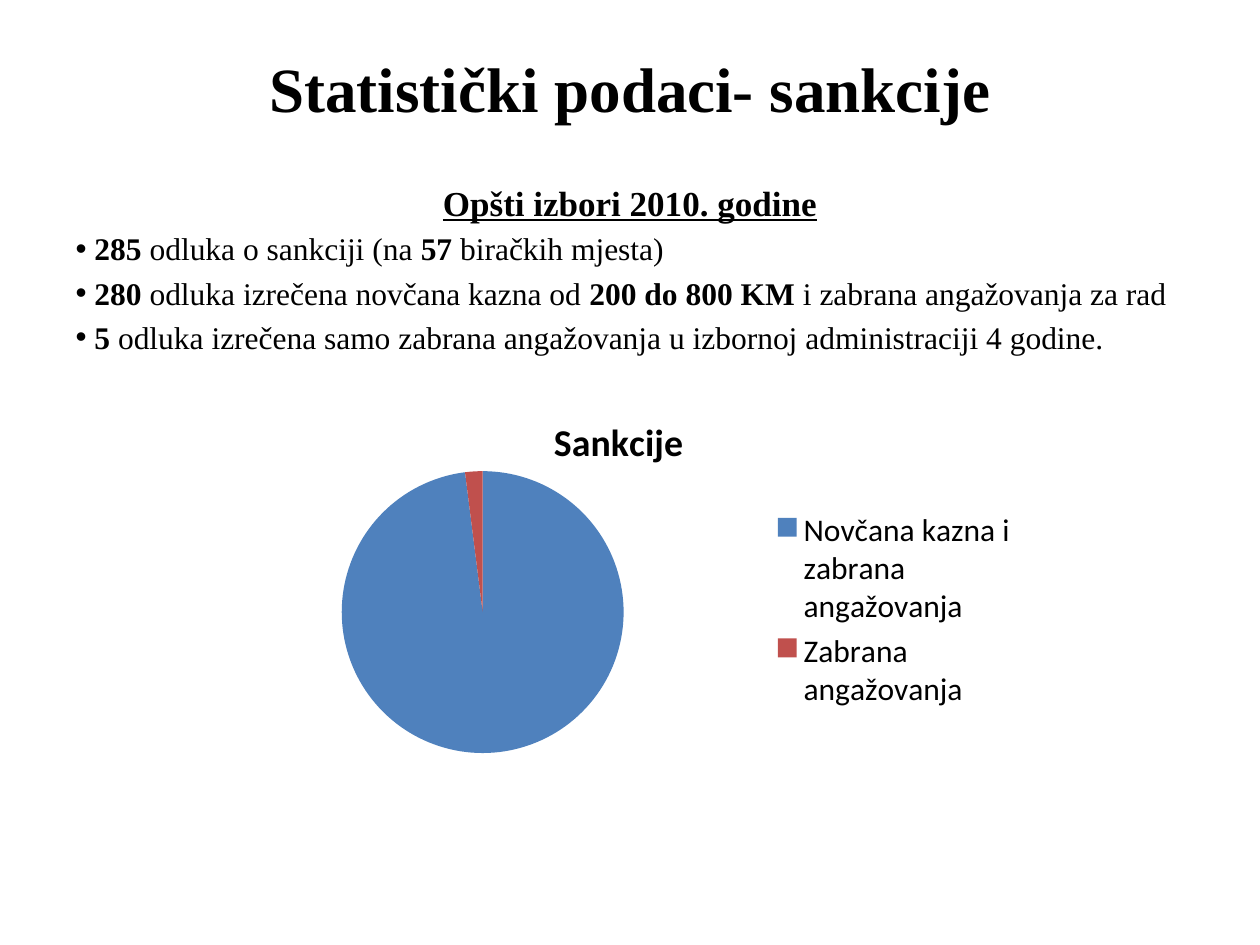
from lxml.etree import SubElement
from pptx import Presentation
from pptx.chart.data import CategoryChartData
from pptx.dml.color import RGBColor as RGB
from pptx.enum.chart import XL_CHART_TYPE as ChartType, XL_LEGEND_POSITION as LegendPos
from pptx.enum.text import MSO_ANCHOR as Anchor, PP_ALIGN as Align
from pptx.oxml.ns import qn
from pptx.util import Inches, Pt

THEME = {
    "text": RGB(0, 0, 0),
    "slices": [RGB(0x4F, 0x81, 0xBD), RGB(0xC0, 0x50, 0x4D)],
    "serif": "Times New Roman",
    "sans": "Calibri",
    "title": Pt(36),
    "heading": Pt(20),
    "body": Pt(18),
    "chart_title": Pt(21.6),
}

prs = Presentation()
prs.slide_width, prs.slide_height = Inches(10), Inches(7.5)
slide = prs.slides.add_slide(prs.slide_layouts[1])


def share_box(left, top, width, height):
    """Turn shares of the slide's size into a left, top, width, height tuple."""
    w, h = prs.slide_width, prs.slide_height
    return int(left * w), int(top * h), int(width * w), int(height * h)


def style(font, **values):
    for key, value in values.items():
        setattr(font, key, value)
    font.color.rgb = THEME["text"]


title, body = slide.placeholders
for holder, box in [(title, (0.05, 0.04, 0.9, 0.105)), (body, (0.05, 0.185, 0.9, 0.71))]:
    holder.left, holder.top, holder.width, holder.height = share_box(*box)

title.text_frame.text = "Statistički podaci- sankcije"
title.text_frame.vertical_anchor = Anchor.MIDDLE
title_line = title.text_frame.paragraphs[0]
title_line.alignment = Align.CENTER
style(title_line.runs[0].font, name=THEME["serif"], size=THEME["title"], bold=True)

body.text_frame.text = "Opšti izbori 2010. godine"
heading = body.text_frame.paragraphs[0]
heading.alignment = Align.CENTER
SubElement(heading._p.get_or_add_pPr(), qn("a:buNone"))
style(heading.runs[0].font, name=THEME["serif"], size=THEME["heading"],
      bold=True, underline=True)

# Runs alternate between bold and regular, starting with bold.
findings = [
    [" 285 ", "odluka o sankciji (na ", "57", " biračkih mjesta)"],
    [" 280", " odluka izrečena novčana kazna od ", "200 do 800 KM ",
     "i zabrana angažovanja za rad"],
    [" 5", " odluka izrečena samo zabrana angažovanja u izbornoj administraciji 4 godine."],
]
for finding in findings:
    line = body.text_frame.add_paragraph()
    line.alignment = Align.JUSTIFY
    props = line._p.get_or_add_pPr()
    props.set("marL", "0")
    props.set("indent", "0")
    SubElement(props, qn("a:buChar"), char="•")
    for i, words in enumerate(finding):
        run = line.add_run()
        run.text = words
        style(run.font, name=THEME["serif"], size=THEME["body"], bold=i % 2 == 0)

sanctions = CategoryChartData()
sanctions.categories = ["Novčana kazna i zabrana angažovanja", "Zabrana angažovanja"]
sanctions.add_series("Sankcije", [98, 2])
pie = slide.shapes.add_chart(
    ChartType.PIE, *share_box(0.164, 0.416, 0.654, 0.459), sanctions).chart
style(pie.font, name=THEME["sans"], size=THEME["body"])

pie.has_title = True
pie.chart_title.text_frame.text = "Sankcije"
style(pie.chart_title.text_frame.paragraphs[0].runs[0].font,
      name=THEME["sans"], size=THEME["chart_title"], bold=True)

pie.has_legend = True
pie.legend.position = LegendPos.RIGHT
pie.legend.include_in_layout = False

plot = pie.plots[0]
plot.vary_by_categories = True
for i, color in enumerate(THEME["slices"]):
    fill = plot.series[0].points[i].format.fill
    fill.solid()
    fill.fore_color.rgb = color

plot_area = pie._chartSpace.chart.plotArea
for old in plot_area.findall(qn("c:layout")):
    plot_area.remove(old)
layout = SubElement(plot_area, qn("c:layout"))
plot_area.insert(0, layout)
manual = SubElement(layout, qn("c:manualLayout"))
for tag, value in [("layoutTarget", "inner"), ("xMode", "edge"), ("yMode", "edge"),
                   ("x", 0.025), ("y", 0.18), ("w", 0.62), ("h", 0.65)]:
    SubElement(manual, qn(f"c:{tag}"), val=str(value))

prs.save("out.pptx")
